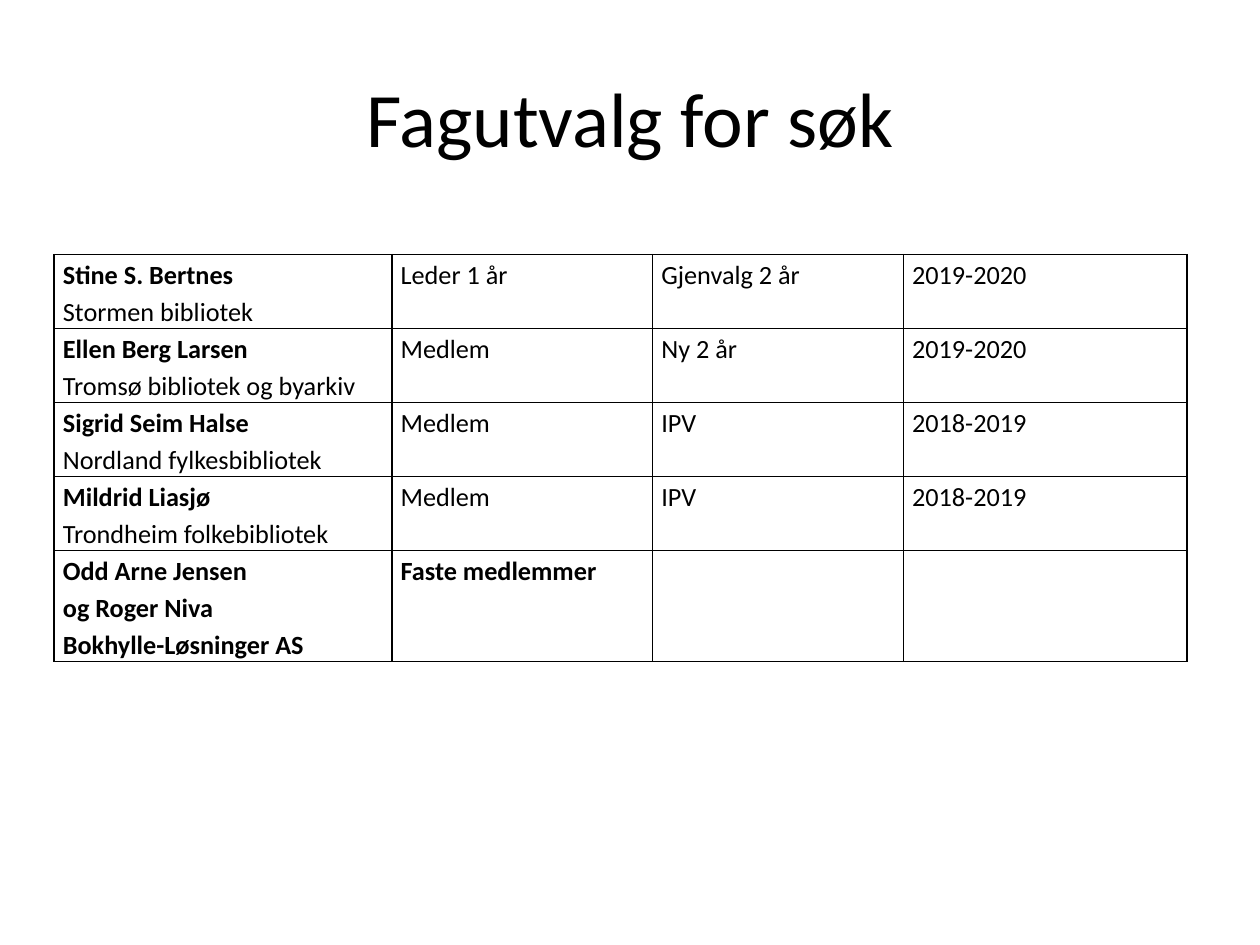
from lxml import etree
from pptx import Presentation
from pptx.dml.color import RGBColor
from pptx.enum.text import MSO_ANCHOR, PP_ALIGN
from pptx.oxml.ns import qn
from pptx.util import Inches, Pt

MIDDLE = MSO_ANCHOR.MIDDLE
TOP = MSO_ANCHOR.TOP
CENTER = PP_ALIGN.CENTER
LEFT = PP_ALIGN.LEFT

WIDTHS = [2.68, 2.07, 1.99, 2.25]
HEIGHTS = [0.56] * 4 + [0.84]
MEMBERS = [
    ("Stine S. Bertnes", "Stormen bibliotek", "Leder 1 år", "Gjenvalg 2 år", "2019-2020"),
    ("Ellen Berg Larsen", "Tromsø bibliotek og byarkiv", "Medlem", "Ny 2 år", "2019-2020"),
    ("Sigrid Seim Halse", "Nordland fylkesbibliotek", "Medlem", "IPV", "2018-2019"),
    ("Mildrid Liasjø", "Trondheim folkebibliotek", "Medlem", "IPV", "2018-2019"),
]
STAFF = ["Odd Arne Jensen", "og Roger Niva", "Bokhylle-Løsninger AS"]


def color(code):
    return RGBColor.from_string(code)


def assign(target, values):
    for name, value in values.items():
        setattr(target, name, value)


class Deck:
    font = "Calibri"
    ink = "000000"
    inset = {"margin_left": Inches(0.07), "margin_right": Inches(0.07),
             "margin_top": 0, "margin_bottom": 0, "vertical_anchor": TOP}

    def __init__(self):
        self.file = Presentation()
        assign(self.file, {"slide_width": Inches(10), "slide_height": Inches(7.5)})
        self.slide = self.file.slides.add_slide(self.file.slide_layouts[5])

    def label(self, par, lines, size, align, space):
        assign(par, {"alignment": align, "line_spacing": space})
        for index, (text, bold) in enumerate(lines):
            if index:
                par.add_line_break()
            run = par.add_run()
            run.text = text
            assign(run.font, {"name": self.font, "size": Pt(size), "bold": bold})
            run.font.color.rgb = color(self.ink)

    def title(self, text, left, top, width, height):
        shape = self.slide.shapes.title
        assign(shape, {"left": Inches(left), "top": Inches(top),
                       "width": Inches(width), "height": Inches(height)})
        shape.text_frame.vertical_anchor = MIDDLE
        self.label(shape.text_frame.paragraphs[0], [(text, False)], 44, CENTER, 1.0)

    def border(self, cell):
        props = cell._tc.get_or_add_tcPr()
        for index, side in enumerate(("lnL", "lnR", "lnT", "lnB")):
            line = etree.Element(qn("a:" + side), w=str(Pt(1)))
            fill = etree.SubElement(line, qn("a:solidFill"))
            etree.SubElement(fill, qn("a:srgbClr"), val=self.ink)
            props.insert(index, line)

    def table(self, rows, left, top, widths, heights):
        frame = self.slide.shapes.add_table(
            len(rows), len(widths), Inches(left), Inches(top),
            Inches(sum(widths)), Inches(sum(heights)))
        grid = frame.table
        assign(grid, {"first_row": False, "horz_banding": False})
        for col, width in zip(grid.columns, widths):
            col.width = Inches(width)
        for row, height, cells in zip(grid.rows, heights, rows):
            row.height = Inches(height)
            for cell, lines in zip(row.cells, cells):
                assign(cell, self.inset)
                cell.fill.background()
                self.border(cell)
                self.label(cell.text_frame.paragraphs[0], lines, 15, LEFT, 1.15)


def main():
    deck = Deck()
    deck.title("Fagutvalg for søk", 0.5, 0.3, 9, 1.25)
    rows = [[[(name, True), (place, False)]] + [[(text, False)] for text in rest]
            for name, place, *rest in MEMBERS]
    rows.append([[(text, True) for text in STAFF], [("Faste medlemmer", True)], [], []])
    deck.table(rows, 0.43, 2.02, WIDTHS, HEIGHTS)
    deck.file.save("out.pptx")


if __name__ == "__main__":
    main()
